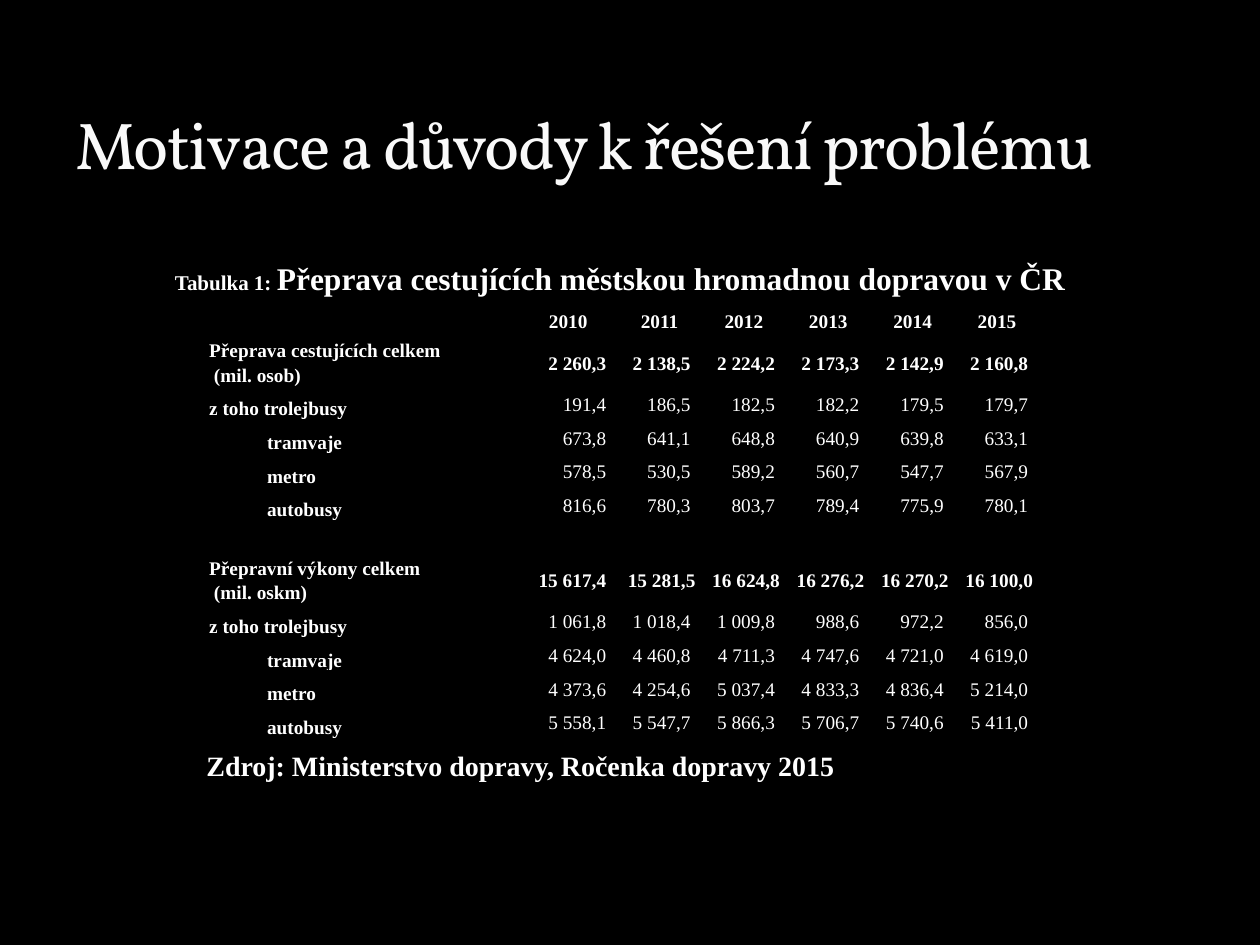
from lxml.etree import SubElement
from pptx import Presentation
from pptx.dml.color import RGBColor
from pptx.enum.text import MSO_ANCHOR, MSO_AUTO_SIZE, PP_ALIGN
from pptx.oxml.ns import qn
from pptx.util import Inches, Pt

COLORS = {"back": "000000", "text": "FFFFFF", "title": "F9F9F9"}
SERIF = "Times New Roman"
WIDE, HIGH = Inches(10), Inches(7.5)
UNIT = WIDE // 100
COLS = [25.1, 7.8] + [6.7] * 5
ROW, TALL = 2.67, 3.7
YEARS = ["2010", "2011", "2012", "2013", "2014", "2015"]
KINDS = ["z toho trolejbusy", "tramvaje", "metro", "autobusy"]
GROUPS = [
    ("Přeprava cestujících celkem\n (mil. osob)", [
        ["2 260,3", "2 138,5", "2 224,2", "2 173,3", "2 142,9", "2 160,8"],
        ["191,4", "186,5", "182,5", "182,2", "179,5", "179,7"],
        ["673,8", "641,1", "648,8", "640,9", "639,8", "633,1"],
        ["578,5", "530,5", "589,2", "560,7", "547,7", "567,9"],
        ["816,6", "780,3", "803,7", "789,4", "775,9", "780,1"],
    ]),
    ("Přepravní výkony celkem\n (mil. oskm)", [
        ["15 617,4", "15 281,5", "16 624,8", "16 276,2", "16 270,2", "16 100,0"],
        ["1 061,8", "1 018,4", "1 009,8", "988,6", "972,2", "856,0"],
        ["4 624,0", "4 460,8", "4 711,3", "4 747,6", "4 721,0", "4 619,0"],
        ["4 373,6", "4 254,6", "5 037,4", "4 833,3", "4 836,4", "5 214,0"],
        ["5 558,1", "5 547,7", "5 866,3", "5 706,7", "5 740,6", "5 411,0"],
    ]),
]


def grid(*vals):
    return [round(val * UNIT) for val in vals]


def style(font, size, bold=True, name=SERIF, color="text"):
    font.size, font.bold, font.name = Pt(size), bold, name
    font.color.rgb = RGBColor.from_string(COLORS[color])


def add_text(slide, area, parts, align=PP_ALIGN.LEFT, after=10, **look):
    frame = slide.shapes.add_textbox(*grid(*area)).text_frame
    frame.word_wrap = True
    par = frame.paragraphs[0]
    par.alignment, par.space_after = align, Pt(after)
    for text, size in parts:
        run = par.add_run()
        run.text = text
        style(run.font, size, **look)
    return frame


def add_title(slide):
    frame = add_text(slide, (5, 1.7, 90, 13.3),
                     [("Motivace a důvody k řešení problému", 37.8)],
                     after=0, bold=False, name="Vollkorn", color="title")
    frame.vertical_anchor = MSO_ANCHOR.BOTTOM
    frame.paragraphs[0].runs[0].font._element.set("spc", "-100")


def add_note(slide, area, parts, align=PP_ALIGN.LEFT):
    frame = add_text(slide, area, parts, align)
    frame.auto_size = MSO_AUTO_SIZE.SHAPE_TO_FIT_TEXT
    return frame


def edge(cell):
    props = cell._tc.get_or_add_tcPr()
    for tag in ("a:lnL", "a:lnR", "a:lnT", "a:lnB"):
        line = SubElement(props, qn(tag), w=str(Pt(1)))
        fill = SubElement(line, qn("a:solidFill"))
        SubElement(fill, qn("a:srgbClr"), val=COLORS["back"])


def set_cell(cell, text="", align=PP_ALIGN.LEFT, bold=True, low=False, dent=0):
    cell.margin_left, cell.margin_right = grid(0.5 + dent, 0.5)
    cell.margin_top = cell.margin_bottom = 0
    cell.vertical_anchor = MSO_ANCHOR.BOTTOM if low else MSO_ANCHOR.MIDDLE
    edge(cell)
    cell.fill.background()
    cell.text_frame.text = text
    for par in cell.text_frame.paragraphs:
        par.alignment, par.line_spacing = align, 1.15
        style(par.font, 11, bold)
        for run in par.runs:
            style(run.font, 11, bold)


def fill_group(table, top, label, data):
    table.rows[top].height = grid(TALL)[0]
    for step, (name, vals) in enumerate(zip([label] + KINDS, data)):
        row = top + step
        set_cell(table.cell(row, 0), name, low=step > 0,
                 dent=4.6 if step > 1 else 0)
        for col, val in enumerate(vals, 1):
            set_cell(table.cell(row, col), val + " ", PP_ALIGN.RIGHT, step == 0)


def add_stats(slide):
    area = grid(16.1, 24.1, sum(COLS), 10 * ROW + 2 * TALL)
    table = slide.shapes.add_table(12, len(COLS), *area).table
    table.first_row = table.horz_banding = False
    for col, wide in zip(table.columns, grid(*COLS)):
        col.width = wide
    for row in table.rows:
        row.height = grid(ROW)[0]
    for col, year in enumerate([""] + YEARS):
        set_cell(table.cell(0, col), year, PP_ALIGN.CENTER)
        set_cell(table.cell(6, col))
    table.cell(6, 0).merge(table.cell(6, len(YEARS)))
    for top, group in zip((1, 7), GROUPS):
        fill_group(table, top, *group)


def main():
    deck = Presentation()
    deck.slide_width, deck.slide_height = WIDE, HIGH
    slide = deck.slides.add_slide(deck.slide_layouts[6])
    back = slide.background.fill
    back.solid()
    back.fore_color.rgb = RGBColor.from_string(COLORS["back"])
    add_stats(slide)
    add_title(slide)
    source = add_note(slide, (15.4, 58.5, 59.8, 3.9),
                      [("Zdroj: Ministerstvo dopravy, Ročenka dopravy 2015", 16)],
                      PP_ALIGN.JUSTIFY)
    source.paragraphs[0].line_spacing = 1.15
    add_note(slide, (12.9, 20.1, 72.8, 4),
             [("Tabulka 1: ", 12),
              ("Přeprava cestujících městskou hromadnou dopravou v ČR", 18)])
    deck.save("out.pptx")


if __name__ == "__main__":
    main()
